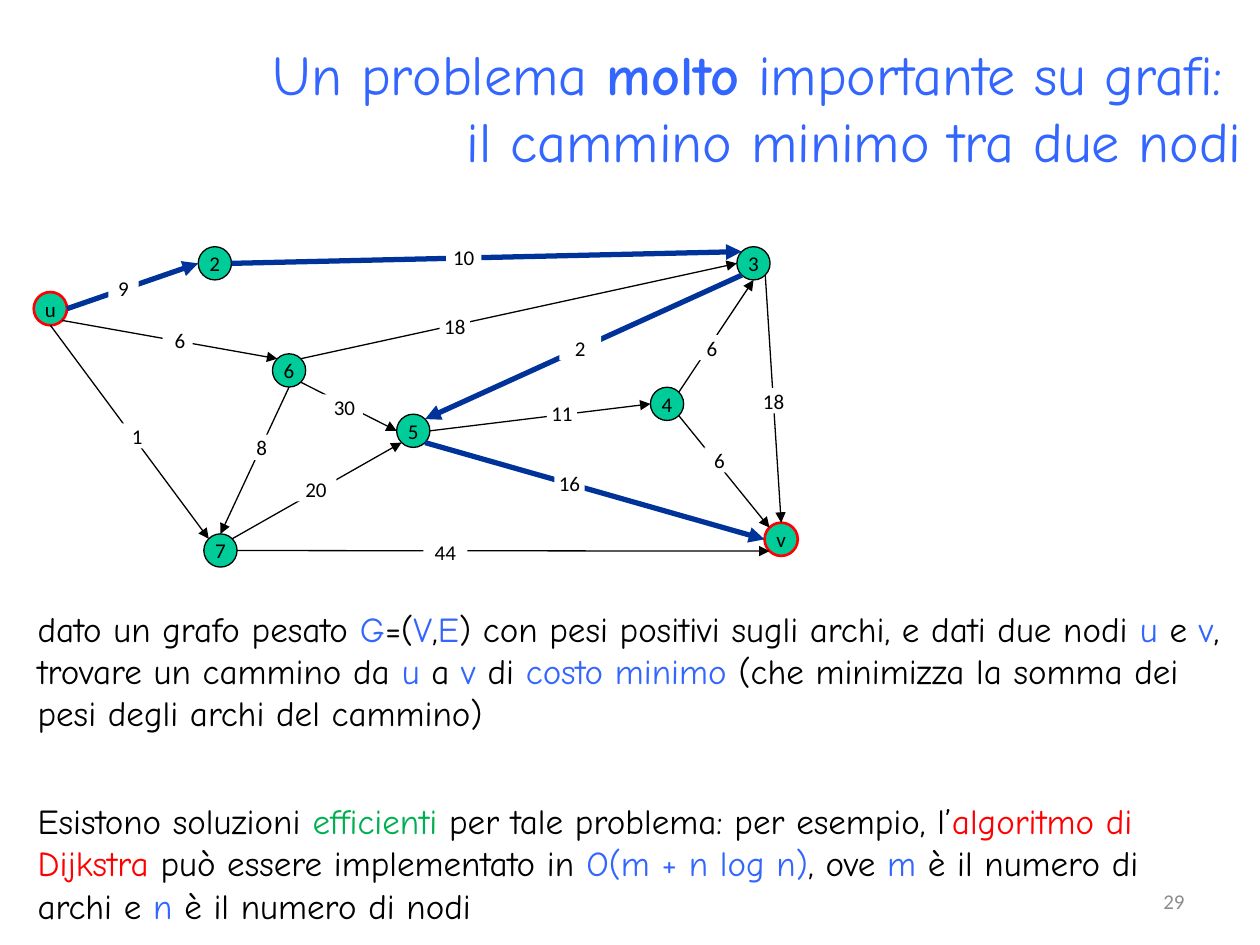
"""Build a slide on the shortest path between two nodes of a weighted graph."""
import math
from typing import NamedTuple

import lxml.etree
import pptx
import pptx.dml.color
import pptx.enum.shapes
import pptx.enum.text
import pptx.oxml.ns
import pptx.util

Pt = pptx.util.Pt
Align = pptx.enum.text.PP_ALIGN
Anchor = pptx.enum.text.MSO_ANCHOR
Preset = pptx.enum.shapes.MSO_SHAPE

BLACK, WHITE, RED = "000000", "FFFFFF", "FF0000"
BLUE, NAVY, GREEN, TEAL, GRAY = "3366FF", "003399", "00B050", "00CC99", "8C8C8C"
NODE_SIZE = 19
LABEL_HEIGHT = 14.4
ANGLES = {"right": 0, "bottom right": 45, "bottom": 90, "bottom left": 135,
          "left": 180, "top left": 225, "top": 270, "top right": 315}


class Run(NamedTuple):
    text: str
    color: str = BLACK
    bold: bool = False


class Box(NamedTuple):
    left: float
    top: float
    width: float
    height: float


class Node(NamedTuple):
    name: str
    x: float
    y: float
    terminal: bool = False


class Edge(NamedTuple):
    start: str
    start_side: str
    end: str
    end_side: str
    on_path: bool = False


class Weight(NamedTuple):
    text: str
    left: float
    top: float
    width: float = 17.3
    inset: float = 0


NODES = [
    Node("u", 28.8, 176.4, True), Node("3", 430.6, 150.5),
    Node("v", 446.4, 308.2, True), Node("2", 122.8, 150.5),
    Node("6", 165.2, 211.7), Node("7", 126, 314.6),
    Node("4", 381.2, 230.8), Node("5", 236.2, 246.2),
]
EDGES = [
    Edge("u", "right", "2", "left", True),
    Edge("u", "bottom right", "6", "top left"),
    Edge("u", "bottom", "7", "top left"),
    Edge("6", "top right", "3", "left"),
    Edge("4", "top right", "3", "bottom"),
    Edge("6", "bottom right", "5", "left"),
    Edge("5", "bottom right", "v", "left", True),
    Edge("5", "right", "4", "left"),
    Edge("4", "bottom right", "v", "top left"),
    Edge("3", "bottom left", "5", "top right", True),
    Edge("6", "bottom", "7", "top"),
    Edge("7", "top right", "5", "bottom left"),
    Edge("2", "right", "3", "top left", True),
    Edge("7", "right", "v", "bottom left"),
    Edge("3", "bottom right", "v", "top"),
]
WEIGHTS = [
    Weight("10", 254.9, 139.7, 20.2), Weight("18", 251.3, 179.3),
    Weight("2", 319.7, 191.5, 23.8), Weight("9", 61.9, 157.7),
    Weight("6", 92.9, 187.2, inset=2.7), Weight("1", 69.8, 241.9),
    Weight("8", 138.2, 248.4, inset=5.4), Weight("30", 183.6, 225.4, 23.8, 2.7),
    Weight("20", 166.3, 272.2, 25.9, 2.7), Weight("44", 241.9, 308.2, 25.2),
    Weight("16", 316.8, 268.6), Weight("11", 312.5, 229),
    Weight("6", 398.2, 191.5), Weight("18", 433.4, 221.8),
    Weight("6", 402.5, 255.6),
]
TITLE = [
    [Run("Un problema ", BLUE), Run("molto", BLUE, True),
     Run(" importante su grafi: ", BLUE)],
    [Run("il cammino minimo tra due nodi", BLUE)],
]
PROBLEM = [
    Run("dato un grafo pesato "), Run("G", BLUE), Run("=("), Run("V", BLUE),
    Run(","), Run("E", BLUE),
    Run(") con pesi positivi sugli archi, e dati due nodi "), Run("u", BLUE),
    Run(" e "), Run("v", BLUE), Run(", trovare un cammino da "), Run("u", BLUE),
    Run(" a "), Run("v", BLUE), Run(" di "), Run("costo minimo", BLUE),
    Run(" (che minimizza la somma dei pesi degli archi del cammino)"),
]
SOLUTION = [
    Run("Esistono soluzioni "), Run("efficienti", GREEN),
    Run(" per tale problema: per esempio, l’"),
    Run("algoritmo di Dijkstra ", RED), Run("può essere implementato in "),
    Run("O(m + n log n)", BLUE), Run(", ove "), Run("m", BLUE),
    Run(" è il numero di archi e "), Run("n", BLUE), Run(" è il numero di nodi"),
]


def rgb(color: str) -> pptx.dml.color.RGBColor:
    return pptx.dml.color.RGBColor.from_string(color)


def set_values(target, values: dict) -> None:
    for name, value in values.items():
        setattr(target, name, value)


def write(shape, lines: list[list[Run]], size: float, font: str, align,
          **frame_values) -> None:
    set_values(shape.text_frame, {"word_wrap": True, **frame_values})
    paragraph = shape.text_frame.paragraphs[0]
    paragraph.alignment = align
    for index, line in enumerate(lines):
        if index:
            paragraph.add_line_break()
        for part in line:
            run = paragraph.add_run()
            run.text = part.text
            set_values(run.font, {"name": font, "size": Pt(size), "bold": part.bold})
            run.font.color.rgb = rgb(part.color)


def add_text(slide, box: Box, lines: list[list[Run]], size: float, font: str,
             align=Align.LEFT, anchor=Anchor.TOP) -> None:
    shape = slide.shapes.add_textbox(*map(Pt, box))
    write(shape, lines, size, font, align, vertical_anchor=anchor)


def add_filled(slide, preset, box: Box, fill: str):
    shape = slide.shapes.add_shape(preset, *map(Pt, box))
    shape.shadow.inherit = False
    shape.fill.solid()
    shape.fill.fore_color.rgb = rgb(fill)
    return shape


def draw_node(slide, node: Node) -> None:
    box = Box(node.x - NODE_SIZE / 2, node.y - NODE_SIZE / 2, NODE_SIZE, NODE_SIZE)
    shape = add_filled(slide, Preset.OVAL, box, TEAL)
    shape.line.color.rgb = rgb(RED if node.terminal else BLACK)
    shape.line.width = Pt(1.5 if node.terminal else 0.75)
    write(shape, [[Run(node.name)]], 12, "Calibri", Align.CENTER,
          word_wrap=False, vertical_anchor=Anchor.MIDDLE)


def rim_point(node: Node, side: str) -> tuple[int, int]:
    angle = math.radians(ANGLES[side])
    return (Pt(node.x + NODE_SIZE / 2 * math.cos(angle)),
            Pt(node.y + NODE_SIZE / 2 * math.sin(angle)))


def draw_edge(slide, edge: Edge, nodes: dict[str, Node]) -> None:
    connector = slide.shapes.add_connector(
        pptx.enum.shapes.MSO_CONNECTOR.STRAIGHT,
        *rim_point(nodes[edge.start], edge.start_side),
        *rim_point(nodes[edge.end], edge.end_side))
    connector.line.color.rgb = rgb(NAVY if edge.on_path else BLACK)
    connector.line.width = Pt(3 if edge.on_path else 0.75)
    qn = pptx.oxml.ns.qn
    properties = connector._element.spPr
    lxml.etree.SubElement(properties.find(qn("a:ln")), qn("a:tailEnd"), type="triangle")
    lxml.etree.SubElement(properties, qn("a:effectLst"))


def draw_weight(slide, weight: Weight) -> None:
    box = Box(weight.left, weight.top, weight.width, LABEL_HEIGHT)
    shape = add_filled(slide, Preset.RECTANGLE, box, WHITE)
    shape.line.fill.background()
    write(shape, [[Run(weight.text)]], 12, "Calibri", Align.CENTER,
          margin_left=Pt(weight.inset), margin_right=0, margin_top=0,
          margin_bottom=0, vertical_anchor=Anchor.TOP)


def main() -> None:
    presentation = pptx.Presentation()
    set_values(presentation, {"slide_width": Pt(720), "slide_height": Pt(540)})
    slide = presentation.slides.add_slide(presentation.slide_layouts[6])
    add_text(slide, Box(105, 16, 612, 90), TITLE, 32, "Comic Neue",
             Align.RIGHT, Anchor.MIDDLE)
    add_text(slide, Box(14.4, 343.4, 705.6, 80), [PROBLEM], 20, "Comic Neue")
    for node in NODES:
        draw_node(slide, node)
    nodes = {node.name: node for node in NODES}
    for edge in EDGES:
        draw_edge(slide, edge, nodes)
    for weight in WEIGHTS:
        draw_weight(slide, weight)
    add_text(slide, Box(14.4, 453.6, 692, 80), [SOLUTION], 20, "Comic Neue")
    add_text(slide, Box(516, 500.4, 168, 28.8), [[Run("29", GRAY)]], 12, "Calibri",
             Align.RIGHT, Anchor.MIDDLE)
    presentation.save("out.pptx")


if __name__ == "__main__":
    main()
